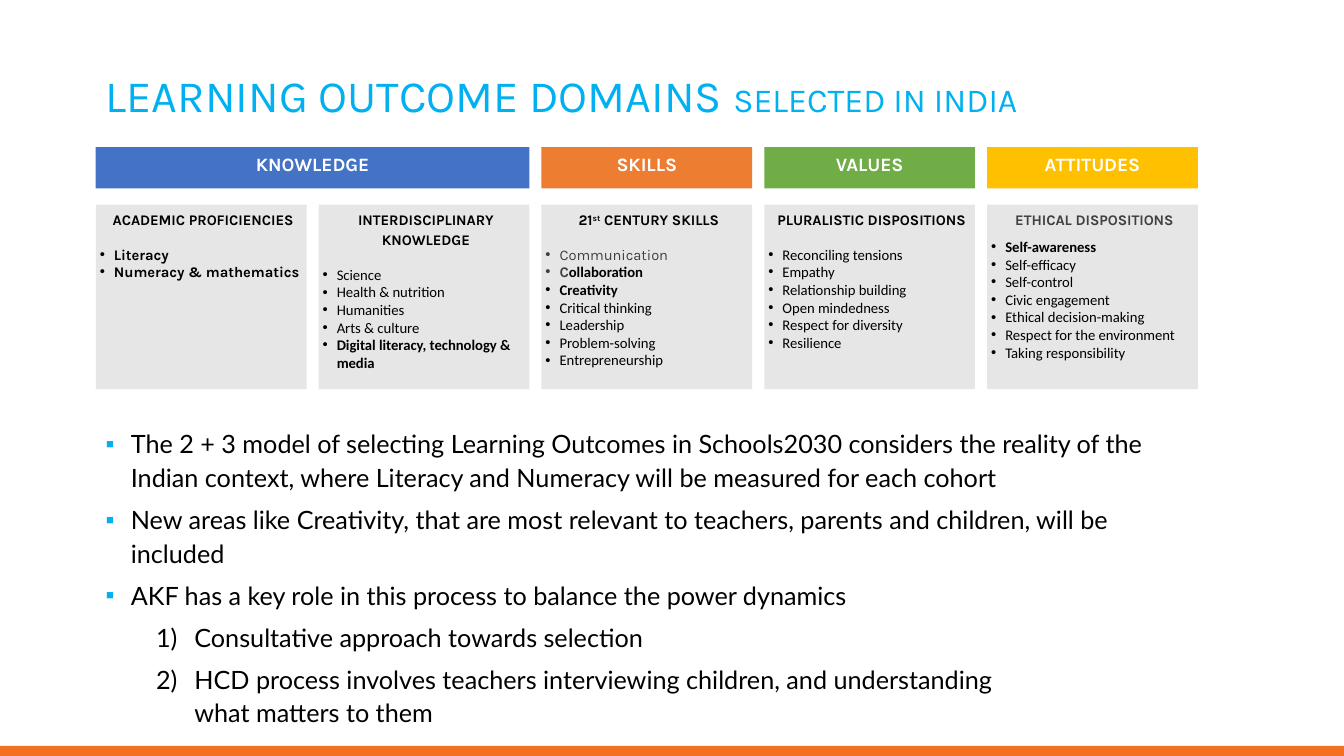
from collections import namedtuple
from lxml.etree import SubElement
from pptx import Presentation
from pptx.dml.color import RGBColor
from pptx.enum.shapes import MSO_SHAPE
from pptx.enum.text import MSO_ANCHOR, MSO_AUTO_SIZE, PP_ALIGN
from pptx.oxml.ns import qn
from pptx.util import Inches, Pt

Type = namedtuple("Type", "size face color bold raised", defaults=(False, False))


class Theme:
    sky, black, white, dark = "00B0F0", "000000", "FFFFFF", "404040"
    gray, flame = "E7E6E6", "F37020"
    blue, orange, green, gold = "4472C4", "ED7D31", "70AD47", "FFC000"
    title = Type(32, "Karla", sky)
    minor = Type(24, "Karla", sky)
    body = Type(18, "Lato", black)
    label = Type(13.5, "Karla", white, True)
    head = Type(10.5, "Karla", black, True)
    soft = Type(10.5, "Karla", dark, True)
    light = Type(10.5, "Karla", dark)
    item = Type(10.5, "Calibri", black)
    bold = Type(10.5, "Calibri", black, True)


class Board:
    # Grid of five columns, in inches
    left, pitch, wide = 0.95, 2.21, 2.09

    def __init__(self, deck, theme):
        self.theme = theme
        self.slide = deck.slides.add_slide(deck.slide_layouts[5])

    def span(self, col, count=1):
        return self.left + col * self.pitch, self.wide + (count - 1) * self.pitch

    def add_runs(self, para, runs):
        for text, kind in runs:
            for i, line in enumerate(text.split("\n")):
                if i:
                    para.add_line_break()
                run = para.add_run()
                run.text = line
                font = run.font
                font.size, font.name, font.bold = Pt(kind.size), kind.face, kind.bold
                font.color.rgb = RGBColor.from_string(kind.color)
                if kind.raised:
                    run._r.get_or_add_rPr().set("baseline", "30000")

    def bullet(self, para, mark, margin, hang, color=None):
        props = para._p.get_or_add_pPr()
        props.set("marL", str(Inches(margin)))
        props.set("indent", str(-Inches(hang)))
        if color:
            SubElement(SubElement(props, qn("a:buClr")), qn("a:srgbClr"), val=color)
        if mark == "1)":
            SubElement(props, qn("a:buFont"), typeface="+mj-lt")
            SubElement(props, qn("a:buAutoNum"), type="arabicParenR")
        else:
            SubElement(props, qn("a:buFont"), typeface="Arial")
            SubElement(props, qn("a:buChar"), char=mark)

    def title(self, runs):
        shape = self.slide.shapes.title
        shape.left, shape.top = Inches(self.left), Inches(0.64)
        shape.width, shape.height = Inches(11.43), Inches(0.66)
        frame = shape.text_frame
        frame.word_wrap, frame.auto_size = True, MSO_AUTO_SIZE.NONE
        frame.vertical_anchor = MSO_ANCHOR.MIDDLE
        para = frame.paragraphs[0]
        para.alignment, para.line_spacing = PP_ALIGN.LEFT, 0.9
        self.add_runs(para, runs)

    def block(self, x, y, w, h, fill, kind=MSO_SHAPE.RECTANGLE):
        shape = self.slide.shapes.add_shape(kind, *map(Inches, (x, y, w, h)))
        shape.shadow.inherit = False
        shape.fill.solid()
        shape.fill.fore_color.rgb = RGBColor.from_string(fill)
        shape.line.fill.background()
        shape.text_frame.word_wrap = True
        shape.text_frame.vertical_anchor = MSO_ANCHOR.TOP
        return shape

    def band(self, col, count, text, fill):
        x, w = self.span(col, count)
        para = self.block(x, 1.46, w, 0.41, fill).text_frame.paragraphs[0]
        para.alignment = PP_ALIGN.CENTER
        self.add_runs(para, [(text, self.theme.label)])

    def panel(self, col, head, gap, items):
        x, w = self.span(col)
        shape = self.block(x, 2.03, w, 1.83, self.theme.gray,
                           MSO_SHAPE.ROUNDED_RECTANGLE)
        shape.adjustments[0] = 0
        frame = shape.text_frame
        frame.margin_left = frame.margin_top = frame.margin_bottom = Inches(0.04)
        frame.margin_right = 0
        para = frame.paragraphs[0]
        para.alignment, para.line_spacing = PP_ALIGN.CENTER, 1.14
        para.space_after = Pt(gap)
        self.add_runs(para, head)
        for runs in items:
            para = frame.add_paragraph()
            para.alignment = PP_ALIGN.LEFT
            self.bullet(para, "•", 0.14, 0.14)
            self.add_runs(para, runs)

    def points(self, rows):
        box = self.slide.shapes.add_textbox(
            *map(Inches, (self.left, 4.17, 11.03, 2.67)))
        frame = box.text_frame
        frame.word_wrap = True
        for i, (level, text) in enumerate(rows):
            para = frame.add_paragraph() if i else frame.paragraphs[0]
            if level:
                para.level = level
                self.bullet(para, "1)", 0.88, 0.38)
            else:
                self.bullet(para, "▪", 0.25, 0.25, self.theme.sky)
            para.line_spacing = Pt(24)
            para.space_before = Pt(6 if i else 0)
            self.add_runs(para, [(text, self.theme.body)])


def plain(*names):
    return [[(name, Theme.item)] for name in names]


def main():
    deck = Presentation()
    deck.slide_width, deck.slide_height = Inches(13.33), Inches(7.5)
    t = Theme
    board = Board(deck, t)

    # Footer strip and title
    board.block(0, 7.4, 13.33, 0.1, t.flame)
    board.title([("LEARNING OUTCOME DOMAINS ", t.title),
                 ("SELECTED IN INDIA", t.minor)])

    # Main points
    board.points([
        (0, "The 2 + 3 model of selecting Learning Outcomes in Schools2030 considers "
            "the reality of the Indian context, where Literacy and Numeracy will be "
            "measured for each cohort"),
        (0, "New areas like Creativity, that are most relevant to teachers, parents "
            "and children, will be included"),
        (0, "AKF has a key role in this process to balance the power dynamics"),
        (1, "Consultative approach towards selection"),
        (1, "HCD process involves teachers interviewing children, and understanding\n"
            "what matters to them"),
    ])

    # Domain bands
    for band in [(0, 2, "KNOWLEDGE", t.blue), (2, 1, "SKILLS", t.orange),
                 (3, 1, "VALUES", t.green), (4, 1, "ATTITUDES", t.gold)]:
        board.band(*band)

    # Domain panels: heading, gap below it, items
    panels = [
        ([("ACADEMIC PROFICIENCIES", t.head)], 12,
         [[("Literacy", t.head)], [("Numeracy & mathematics", t.head)]]),
        ([("INTERDISCIPLINARY KNOWLEDGE", t.head)], 12,
         plain("Science", "Health & nutrition", "Humanities", "Arts & culture")
         + [[("Digital literacy, technology & media", t.bold)]]),
        ([("21", t.head), ("st", t.head._replace(raised=True)),
          (" CENTURY SKILLS", t.head)], 12,
         [[("Communication", t.light)],
          [("C", t.soft), ("ollaboration", t.bold)], [("Creativity", t.bold)]]
         + plain("Critical thinking", "Leadership", "Problem-solving",
                 "Entrepreneurship")),
        ([("PLURALISTIC DISPOSITIONS", t.head)], 12,
         plain("Reconciling tensions", "Empathy", "Relationship building",
               "Open mindedness", "Respect for diversity", "Resilience")),
        ([("ETHICAL DISPOSITIONS", t.soft)], 6.5,
         [[("Self-awareness", t.bold)]]
         + plain("Self-efficacy", "Self-control", "Civic engagement",
                 "Ethical decision-making", "Respect for the environment",
                 "Taking responsibility")),
    ]
    for col, panel in enumerate(panels):
        board.panel(col, *panel)

    deck.save("out.pptx")


if __name__ == "__main__":
    main()
